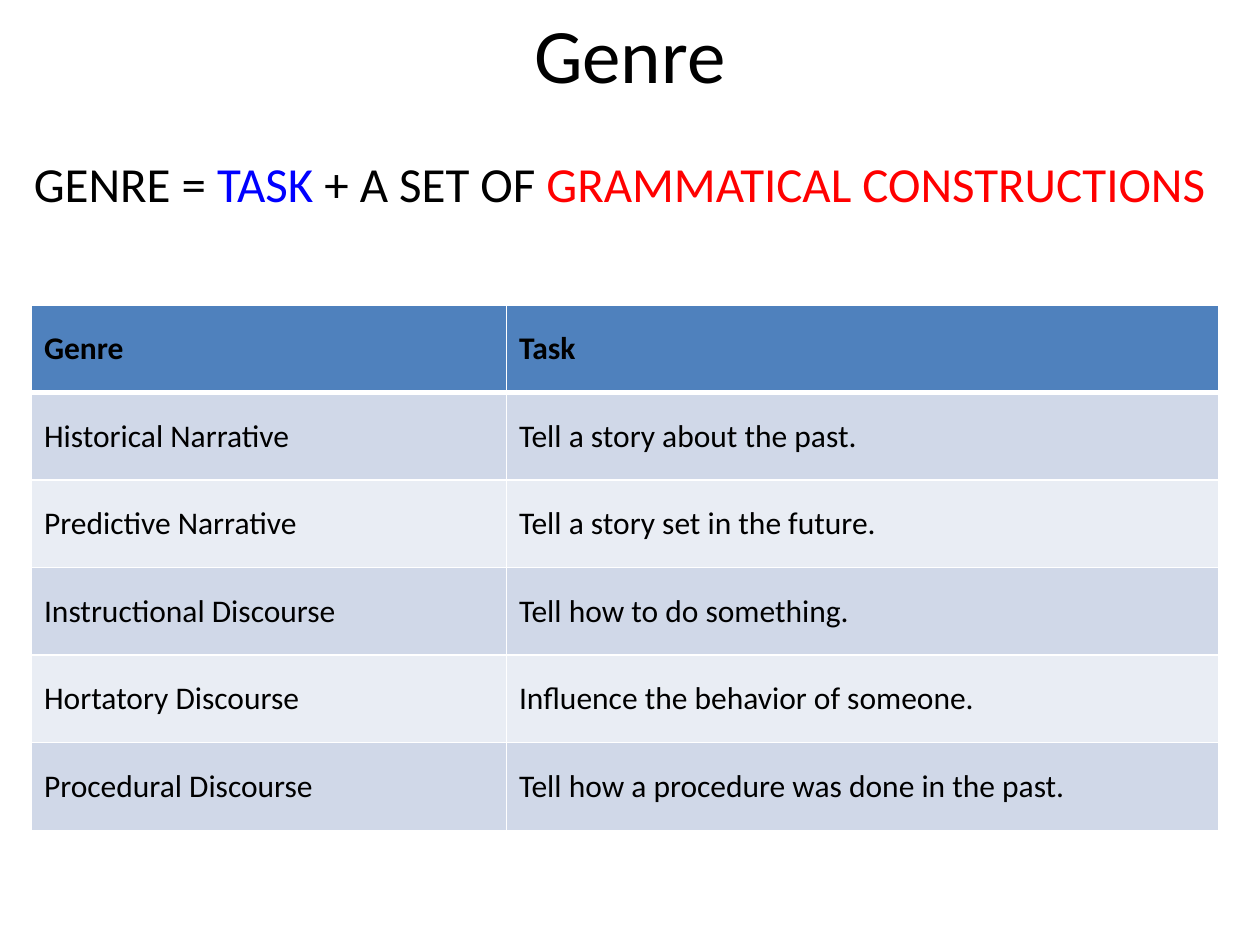
from lxml.etree import SubElement
from pptx import Presentation
from pptx.dml.color import RGBColor as RGB
from pptx.enum.text import MSO_ANCHOR as ANCHOR, PP_ALIGN as ALIGN
from pptx.oxml.ns import qn
from pptx.util import Inches, Pt

TITLE = "Genre"
FORMULA = [
    ("GENRE = ", "text"),
    ("TASK ", "task"),
    ("+ A SET OF ", "text"),
    ("GRAMMATICAL CONSTRUCTIONS", "grammar"),
]
ROWS = [
    ("Genre", "Task"),
    ("Historical Narrative", "Tell a story about the past."),
    ("Predictive Narrative", "Tell a story set in the future."),
    ("Instructional Discourse", "Tell how to do something."),
    ("Hortatory Discourse", "Influence the behavior of someone."),
    ("Procedural Discourse", "Tell how a procedure was done in the past."),
]

THEME = {
    "font": "Calibri",
    "title": 44, "formula": 28, "cell": 18,
    "text": "000000", "task": "0000FF", "grammar": "FF0000",
    "header": "4F81BD", "bands": ("D0D8E8", "E9EDF4"), "border": "FFFFFF",
}
WIDTH, HEIGHT = 10, 7.5
TITLE_BOX = (0.5, 0, 9, 0.83)
FORMULA_BOX = (0.17, 1.17, 9.67, 0.75)
TABLE_BOX = (0.25, 2.42, 9.42, 4.17)
COLUMN_SHARES = (0.4, 0.6)


def write(tf, runs, size, bold=False, align=ALIGN.LEFT, anchor=ANCHOR.MIDDLE, before=0):
    tf.word_wrap = True
    tf.vertical_anchor = anchor
    p = tf.paragraphs[0]
    p.alignment = align
    p.space_before = Pt(before)
    for text, color in runs:
        r = p.add_run()
        r.text = text
        r.font.name = THEME["font"]
        r.font.size = Pt(THEME[size])
        r.font.bold = bold
        r.font.color.rgb = RGB.from_string(THEME[color])


def add_text(s, box, runs, size, **fmt):
    write(s.shapes.add_textbox(*map(Inches, box)).text_frame, runs, size, **fmt)


def set_borders(cell, widths):
    tc_pr = cell._tc.get_or_add_tcPr()
    for i, (side, width) in enumerate(widths.items()):
        ln = SubElement(tc_pr, qn(f"a:ln{side}"), w=str(Pt(width)))
        fill = SubElement(ln, qn("a:solidFill"))
        SubElement(fill, qn("a:srgbClr"), val=THEME["border"])
        tc_pr.remove(ln)
        tc_pr.insert(i, ln)


def add_table(s):
    frame = s.shapes.add_table(len(ROWS), len(COLUMN_SHARES), *map(Inches, TABLE_BOX))
    table = frame.table
    for column, share in zip(table.columns, COLUMN_SHARES):
        column.width = Inches(round(TABLE_BOX[2] * share, 2))
    for i, row in enumerate(ROWS):
        header = i == 0
        color = THEME["header"] if header else THEME["bands"][(i - 1) % 2]
        borders = {"L": 1, "R": 1, "T": 3 if i == 1 else 1, "B": 3 if header else 1}
        for j, text in enumerate(row):
            cell = table.cell(i, j)
            cell.fill.solid()
            cell.fill.fore_color.rgb = RGB.from_string(color)
            set_borders(cell, borders)
            write(cell.text_frame, [(text, "text")], "cell", bold=header)
            cell.vertical_anchor = ANCHOR.MIDDLE


def main():
    prs = Presentation()
    prs.slide_width, prs.slide_height = Inches(WIDTH), Inches(HEIGHT)
    s = prs.slides.add_slide(prs.slide_layouts[6])
    add_text(s, TITLE_BOX, [(TITLE, "text")], "title", align=ALIGN.CENTER)
    add_text(s, FORMULA_BOX, FORMULA, "formula", anchor=ANCHOR.TOP,
             before=0.2 * THEME["formula"])
    add_table(s)
    prs.save("out.pptx")


if __name__ == "__main__":
    main()
